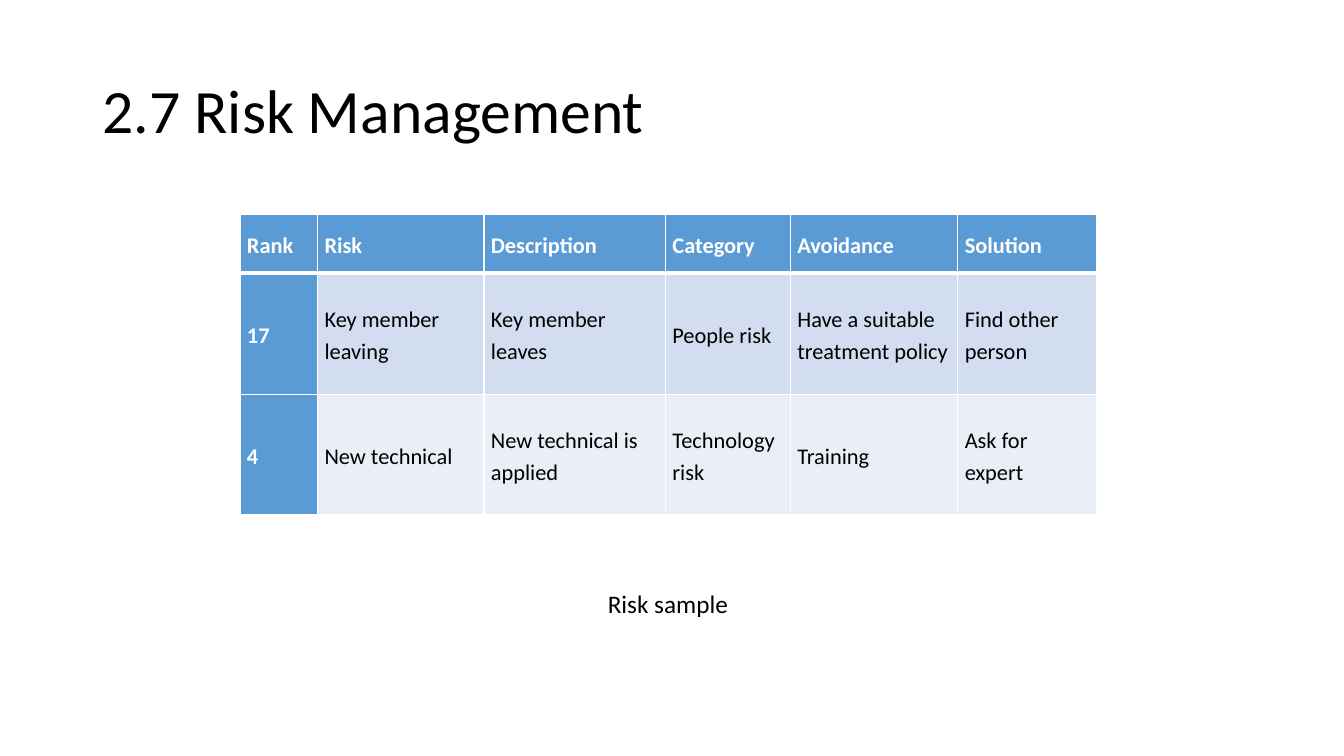
from lxml import etree
from pptx import Presentation
from pptx.dml.color import RGBColor
from pptx.enum.text import MSO_ANCHOR, MSO_AUTO_SIZE
from pptx.oxml.ns import qn
from pptx.util import Inches, Pt

MIDDLE, TOP = MSO_ANCHOR.MIDDLE, MSO_ANCHOR.TOP
FIT_SHAPE = MSO_AUTO_SIZE.SHAPE_TO_FIT_TEXT

COLORS = {
    "text": "000000",
    "white": "FFFFFF",
    "header": "5B9BD5",
    "odd_row": "D2DEEF",
    "even_row": "EAEFF7",
}

COLUMN_WIDTHS = [0.77, 1.65, 1.8, 1.24, 1.66, 1.38]
ROW_HEIGHTS = [0.58, 1.2, 1.2]
RISKS = [
    ["Rank", "Risk", "Description", "Category", "Avoidance", "Solution"],
    ["17", "Key member leaving", "Key member leaves", "People risk",
     "Have a suitable treatment policy", "Find other person"],
    ["4", "New technical", "New technical is applied", "Technology risk",
     "Training", "Ask for expert"],
]


class RiskPage:
    """Holds the style and the current slide, and adds elements to it."""

    font = "Calibri"

    def __init__(self, deck):
        self.page = deck.slides.add_slide(deck.slide_layouts[6])

    def add_span(self, para, text, size, color="text", bold=False):
        span = para.add_run()
        span.text = text
        span.font.name = self.font
        span.font.size = Pt(size)
        span.font.bold = bold
        span.font.color.rgb = RGBColor.from_string(COLORS[color])

    def add_text(self, left, top, width, height, text, size, anchor=TOP, spacing=None):
        box = self.page.shapes.add_textbox(
            Inches(left), Inches(top), Inches(width), Inches(height))
        frame = box.text_frame
        frame.word_wrap = True
        frame.vertical_anchor = anchor
        if anchor == TOP:
            frame.auto_size = FIT_SHAPE
        para = frame.paragraphs[0]
        para.line_spacing = spacing
        self.add_span(para, text, size)

    def add_border(self, cell, side, width):
        properties = cell._tc.get_or_add_tcPr()
        line = etree.SubElement(properties, qn(f"a:ln{side}"), w=str(Pt(width)))
        fill = etree.SubElement(line, qn("a:solidFill"))
        etree.SubElement(fill, qn("a:srgbClr"), val=COLORS["white"])

    def fill_cell(self, cell, text, row, column):
        heading = row == 0 or column == 0
        cell.margin_left = cell.margin_right = Inches(0.07)
        cell.margin_top = cell.margin_bottom = 0
        cell.vertical_anchor = MIDDLE
        thick_side = {0: "B", 1: "T"}.get(row)
        for side in "LRTB":
            self.add_border(cell, side, 3 if side == thick_side else 1)
        band = "odd_row" if row % 2 else "even_row"
        cell.fill.solid()
        cell.fill.fore_color.rgb = RGBColor.from_string(
            COLORS["header" if heading else band])
        para = cell.text_frame.paragraphs[0]
        para.line_spacing = 1.15
        para.space_before = para.space_after = Pt(3)
        self.add_span(para, text, 16, "white" if heading else "text", heading)

    def add_table(self, left, top, widths, heights, rows):
        table = self.page.shapes.add_table(
            len(rows), len(widths), Inches(left), Inches(top),
            Inches(sum(widths)), Inches(sum(heights))).table
        for column, width in zip(table.columns, widths):
            column.width = Inches(width)
        for row, height in zip(table.rows, heights):
            row.height = Inches(height)
        for row, texts in enumerate(rows):
            for column, text in enumerate(texts):
                self.fill_cell(table.cell(row, column), text, row, column)


def main():
    deck = Presentation()
    deck.slide_width, deck.slide_height = Inches(13.33), Inches(7.5)
    page = RiskPage(deck)
    page.add_text(0.92, 0.4, 11.5, 1.45, "2.7 Risk Management", 44, MIDDLE, 0.9)
    page.add_table(2.38, 2.13, COLUMN_WIDTHS, ROW_HEIGHTS, RISKS)
    page.add_text(5.93, 5.79, 1.48, 0.4, "Risk sample", 18)
    deck.save("out.pptx")


if __name__ == "__main__":
    main()
